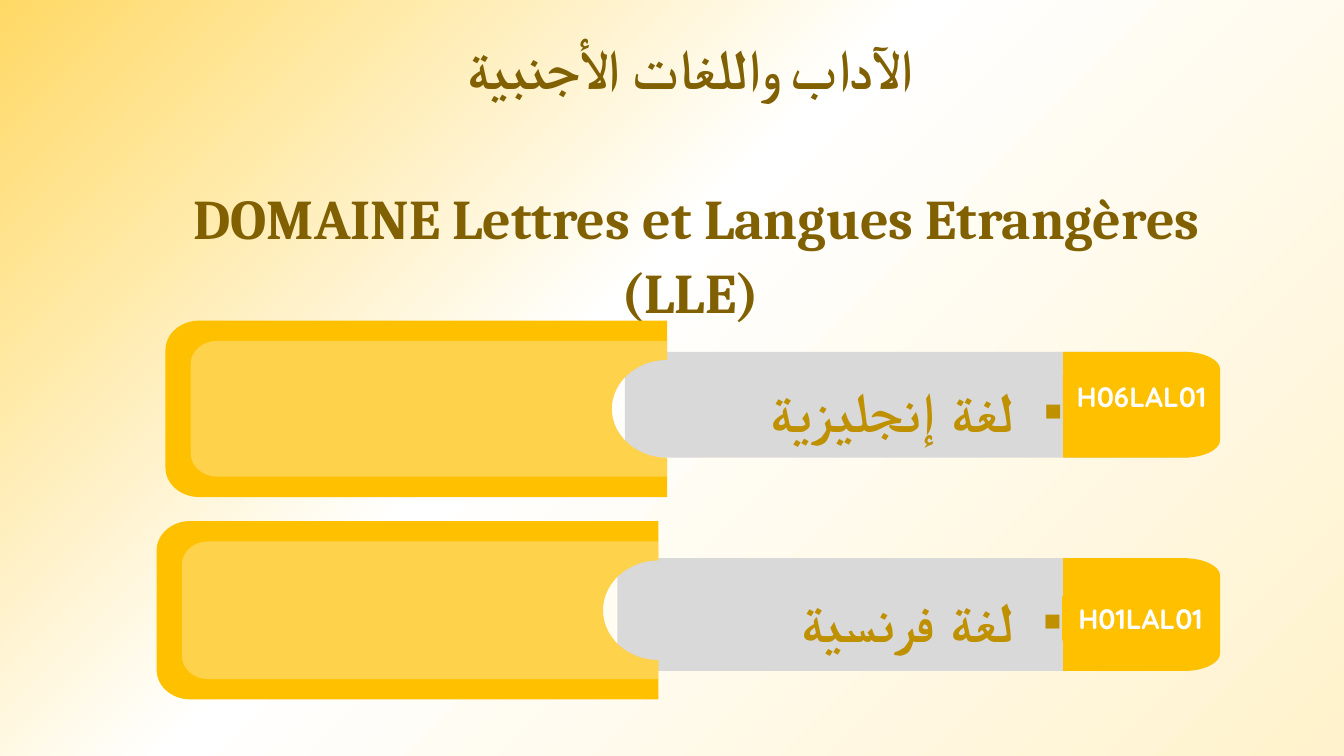
from copy import deepcopy
from lxml import etree
from pptx import Presentation
from pptx.dml.color import RGBColor
from pptx.enum import shapes, text
from pptx.oxml import ns
from pptx.util import Pt

TITLE = [
    ("الآداب واللغات الأجنبية", 0.9, 10),
    ("DOMAINE Lettres et Langues Etrangères ", 1, 58.5),
    ("(LLE)", 0.9, 10),
]
ROWS = [
    dict(name="لغة إنجليزية", code="H06LAL01", bar=(446.4, 251.3, 75.6),
         cup=(118.2, 229, 126), notch=(257, 327),
         label=(455.5, 265.7), tag=(759.3, 267.1)),
    dict(name="لغة فرنسية", code="H01LAL01", bar=(441, 398.7, 80.6),
         cup=(111.9, 372.2, 127.4), notch=(400.3, 471.6),
         label=(455, 415.4), tag=(758.6, 425.8)),
]
STOPS = [(0, "FFD966"), (0.44, "FFFFFF"), (1, "FFF2CC")]
GOLD, PALE, GREY = "FFC000", "FFF2CC", "D9D9D9"
BROWN, OCHRE, WHITE = "806000", "BF9000", "FFFFFF"
SERIF, SANS = "Cambria", "Quicksand"
CENTER, RIGHT = text.PP_ALIGN.CENTER, text.PP_ALIGN.RIGHT
BAR_W, TAB_X, TAB_W, CUP_W = 414, 759.4, 112.2, 358.4
BEND = 0.55


def color(code):
    return RGBColor.from_string(code)


def paint(shape, code, alpha=None):
    shape.shadow.inherit = False
    shape.line.fill.background()
    shape.fill.solid()
    shape.fill.fore_color.rgb = color(code)
    if alpha:
        tone = shape._element.spPr.find(".//" + ns.qn("a:srgbClr"))
        etree.SubElement(tone, ns.qn("a:alpha")).set("val", str(alpha * 1000))
    return shape


def write(para, words, size, font, code, align, rtl=False):
    para.alignment = align
    run = para.add_run()
    run.text = words
    run.font.size, run.font.name, run.font.bold = Pt(size), font, True
    run.font.color.rgb = color(code)
    if rtl:
        para._p.get_or_add_pPr().set("rtl", "1")
        etree.SubElement(run._r.rPr, ns.qn("a:cs")).set("typeface", font)


def toward(start, end):
    return tuple(a + (b - a) * BEND for a, b in zip(start, end))


def outline(slide, start, steps, code, alpha=None):
    spots, bends, here = [], [], start
    for *corner, end in steps:
        if corner:
            bends.append(len(spots))
            spots += [toward(here, corner[0]), toward(end, corner[0])]
        spots.append(end)
        here = end
    pen = slide.shapes.build_freeform(*map(Pt, start))
    pen.add_line_segments([(Pt(x), Pt(y)) for x, y in spots], close=True)
    shape = pen.convert_to_shape()
    lines = list(shape._element.iter(ns.qn("a:lnTo")))
    for i in bends:
        curve = etree.Element(ns.qn("a:cubicBezTo"))
        lines[i].addprevious(curve)
        for line in lines[i:i + 3]:
            curve.append(line[0])
            line.getparent().remove(line)
    paint(shape, code, alpha)


def draw_cup(slide, left, top, right, bottom, rx, ry, notch, code, alpha=None):
    high, low = notch
    deep, mid = right - 39.6, (high + low) / 2
    start = (left + rx, top)
    steps = [
        [(right, top)], [(right, high)],
        [(deep, high), (deep, mid)], [(deep, low), (right, low)],
        [(right, bottom)], [(left + rx, bottom)],
        [(left, bottom), (left, bottom - ry)],
        [(left, top + ry)], [(left, top), start],
    ]
    outline(slide, start, steps, code, alpha)


def draw_tab(slide, top, bottom):
    rx, ry, right = 26, 12.6, TAB_X + TAB_W
    steps = [
        [(right - rx, top)], [(right, top), (right, top + ry)],
        [(right, bottom - ry)], [(right, bottom), (right - rx, bottom)],
        [(TAB_X, bottom)],
    ]
    outline(slide, (TAB_X, top), steps, GOLD)


def draw_bar(slide, left, top, high):
    x, y = left + (BAR_W - high) / 2, top + (high - BAR_W) / 2
    bar = slide.shapes.add_shape(shapes.MSO_SHAPE.ROUND_2_SAME_RECTANGLE,
                                 Pt(x), Pt(y), Pt(high), Pt(BAR_W))
    bar.rotation = 90
    paint(bar, GREY)


def add_label(slide, name, left, top):
    box = slide.shapes.add_textbox(Pt(left), Pt(top), Pt(311), Pt(41))
    box.text_frame.word_wrap = True
    para = box.text_frame.paragraphs[0]
    write(para, name, 40, SANS, OCHRE, RIGHT, True)
    props = para._p.get_or_add_pPr()
    props.set("marL", str(Pt(36)))
    props.set("indent", str(-Pt(36)))
    etree.SubElement(props, ns.qn("a:buFont")).set("typeface", "Arial")
    etree.SubElement(props, ns.qn("a:buChar")).set("char", "▪")


def add_tag(slide, code, left, top):
    tag = slide.shapes.add_shape(shapes.MSO_SHAPE.RECTANGLE,
                                 Pt(left), Pt(top), Pt(TAB_W), Pt(31.7))
    paint(tag, GOLD)
    tag.text_frame.word_wrap = True
    write(tag.text_frame.paragraphs[0], code, 20, SANS, WHITE, CENTER)


def add_row(slide, row):
    left, top, high = row["bar"]
    draw_bar(slide, left, top, high)
    draw_tab(slide, top, top + high)
    add_label(slide, row["name"], *row["label"])
    add_tag(slide, row["code"], *row["tag"])
    x, y, tall = row["cup"]
    for dx, dy, rx, ry, code, alpha in [(0, 0, 24, 21, GOLD, None),
                                        (18, 14.5, 19, 16.5, PALE, 37)]:
        draw_cup(slide, x + dx, y + dy, x + CUP_W, y + tall - dy,
                 rx, ry, row["notch"], code, alpha)


def add_title(slide):
    title = slide.shapes.title
    title.left, title.top, title.width, title.height = map(Pt, (56.9, 25.9, 872.6, 204.5))
    frame = title.text_frame
    frame.word_wrap = True
    frame.auto_size = text.MSO_AUTO_SIZE.NONE
    frame.vertical_anchor = text.MSO_ANCHOR.TOP
    for i, (words, pitch, gap) in enumerate(TITLE):
        para = frame.add_paragraph() if i else frame.paragraphs[0]
        para.line_spacing, para.space_before = pitch, Pt(gap)
        write(para, words, 40, SERIF, BROWN, CENTER, True)


def set_back(slide):
    fill = slide.background.fill
    fill.gradient()
    fill.gradient_angle = 315
    last = fill.gradient_stops[1]._gs
    last.addnext(deepcopy(last))
    for stop, (spot, code) in zip(fill.gradient_stops, STOPS):
        stop.position, stop.color.rgb = spot, color(code)


def main():
    deck = Presentation()
    deck.slide_width, deck.slide_height = Pt(960), Pt(540)
    slide = deck.slides.add_slide(deck.slide_layouts[5])
    set_back(slide)
    add_title(slide)
    for row in ROWS:
        add_row(slide, row)
    deck.save("out.pptx")


if __name__ == "__main__":
    main()
